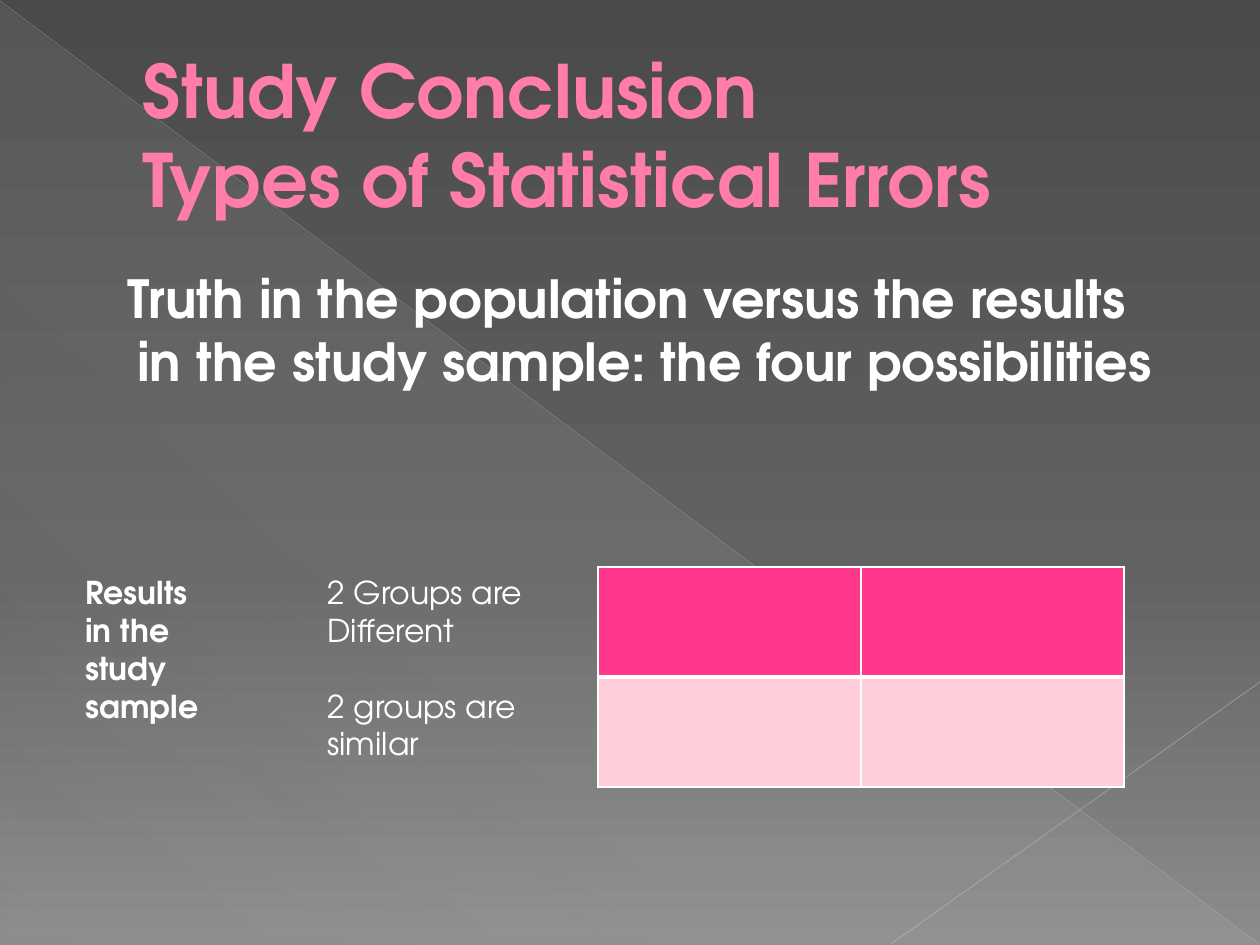
from dataclasses import dataclass

from lxml.etree import SubElement
from pptx import Presentation
from pptx.dml.color import RGBColor
from pptx.enum.shapes import MSO_CONNECTOR, MSO_SHAPE
from pptx.enum.text import MSO_ANCHOR
from pptx.oxml.ns import qn
from pptx.util import Pt

EMU_PER_PX = 914400 / 126
FONT = "TeX Gyre Adventor"
COLORS = {
    "top": "4A4A4A",
    "middle": "626262",
    "bottom": "8C8C8C",
    "sheen": "D2D2D2",
    "diagonal": "BFBFBF",
    "corner": "C6C6C6",
    "title": "FF7DA7",
    "outline": "B12761",
    "white": "FFFFFF",
    "different": "FF388C",
    "similar": "FFCEDA",
}


@dataclass
class Stop:
    position: int
    color: str
    opacity: int = 100


@dataclass
class Line:
    start: tuple[int, int]
    end: tuple[int, int]
    color: str
    width: float
    opacity: int


@dataclass
class Paragraph:
    text: str
    space_before: float = 0


@dataclass
class TextBlock:
    box: tuple[int, int, int, int]
    paragraphs: list[Paragraph]
    size: int
    color: str = "white"
    bold: bool = True
    margin: int = 0
    indent: int = 0
    right_inset: int = 13
    anchor: MSO_ANCHOR = MSO_ANCHOR.TOP
    outline: str = ""


BACKGROUND = [Stop(0, "top"), Stop(60, "middle"), Stop(100, "bottom")]
SHEEN = [Stop(0, "sheen", 10), Stop(70, "sheen", 8), Stop(100, "sheen", 1)]
LINES = [
    Line((0, 1), (1259, 944), "diagonal", 0.39, 35),
    Line((1260, 682), (891, 944), "corner", 0.47, 45),
]
TEXT_BLOCKS = [
    TextBlock((63, 37, 1134, 193), [Paragraph("Study Conclusion\nTypes of Statistical Errors")],
              42, "title", margin=67, anchor=MSO_ANCHOR.MIDDLE, outline="outline"),
    TextBlock((63, 260, 1134, 630),
              [Paragraph("Truth in the population versus the results in the study sample: "
                         "the four possibilities", 6)],
              30, margin=62, indent=-10, right_inset=25),
    TextBlock((73, 567, 158, 165),
              [Paragraph(text) for text in ("Results", "in the", "study", "sample")], 18),
    TextBlock((315, 567, 231, 204),
              [Paragraph("2 Groups are"), Paragraph("Different"),
               Paragraph("2 groups are", 21.6), Paragraph("similar")], 18, bold=False),
]


def px(value: int) -> int:
    return round(value * EMU_PER_PX)


def add_color(parent, color: str, opacity: int = 100) -> None:
    element = SubElement(parent, qn("a:srgbClr"), val=COLORS[color])
    if opacity < 100:
        SubElement(element, qn("a:alpha"), val=str(opacity * 1000))


def set_gradient(fill, owner, stops: list[Stop], angle: int) -> None:
    fill.gradient()
    gradient = next(owner.iter(qn("a:gradFill")))
    stop_list = gradient.find(qn("a:gsLst"))
    for old_stop in list(stop_list):
        stop_list.remove(old_stop)
    for stop in stops:
        element = SubElement(stop_list, qn("a:gs"), pos=str(stop.position * 1000))
        add_color(element, stop.color, stop.opacity)
    direction = gradient.find(qn("a:lin"))
    direction.set("ang", str(angle * 60000))
    direction.set("scaled", "0")


def add_sheen(slide) -> None:
    shape = slide.shapes.add_shape(MSO_SHAPE.RIGHT_TRIANGLE, px(1), px(3), px(1258), px(942))
    shape.shadow.inherit = False
    shape.line.fill.background()
    set_gradient(shape.fill, shape.element.spPr, SHEEN, 133)


def add_line(slide, line: Line) -> None:
    connector = slide.shapes.add_connector(
        MSO_CONNECTOR.STRAIGHT, *(px(value) for value in line.start + line.end))
    connector.line.width = Pt(line.width)
    connector.line.color.rgb = RGBColor.from_string(COLORS[line.color])
    properties = connector.element.spPr
    color = next(properties.iter(qn("a:srgbClr")))
    SubElement(color, qn("a:alpha"), val=str(line.opacity * 1000))
    SubElement(properties, qn("a:effectLst"))


def add_run(paragraph, text: str, block: TextBlock) -> None:
    run = paragraph.add_run()
    run.text = text
    run.font.name = FONT
    run.font.size = Pt(block.size)
    run.font.bold = block.bold
    run.font.color.rgb = RGBColor.from_string(COLORS[block.color])
    if block.outline:
        properties = run.font._element
        outline = properties.makeelement(qn("a:ln"), {"w": str(Pt(0.5))})
        properties.insert(0, outline)
        add_color(SubElement(outline, qn("a:solidFill")), block.outline)


def add_text(slide, block: TextBlock) -> None:
    shape = slide.shapes.add_textbox(*(px(value) for value in block.box))
    frame = shape.text_frame
    frame.word_wrap = True
    frame.vertical_anchor = block.anchor
    frame.margin_right = px(block.right_inset)
    for index, item in enumerate(block.paragraphs):
        paragraph = frame.add_paragraph() if index else frame.paragraphs[0]
        paragraph.space_before = Pt(item.space_before)
        properties = paragraph._p.get_or_add_pPr()
        properties.set("marL", str(px(block.margin)))
        properties.set("indent", str(px(block.indent)))
        for number, text in enumerate(item.text.split("\n")):
            if number:
                paragraph.add_line_break()
            add_run(paragraph, text, block)


def set_cell(cell, color: str, borders: dict[str, int]) -> None:
    properties = cell._tc.get_or_add_tcPr()
    for side, width in borders.items():
        border = SubElement(properties, qn(f"a:ln{side}"), w=str(Pt(width)))
        add_color(SubElement(border, qn("a:solidFill")), "white")
    cell.fill.solid()
    cell.fill.fore_color.rgb = RGBColor.from_string(COLORS[color])


def add_outcome_table(slide) -> None:
    table = slide.shapes.add_table(2, 2, px(598), px(567), px(526), px(220)).table
    table.first_row = False
    table.horz_banding = False
    for row, color in enumerate(("different", "similar")):
        borders = {"L": 1, "R": 1, "T": 3 if row else 1, "B": 1 if row else 3}
        for column in range(2):
            set_cell(table.cell(row, column), color, borders)


def main() -> None:
    presentation = Presentation()
    presentation.slide_width = px(1260)
    presentation.slide_height = px(945)
    slide = presentation.slides.add_slide(presentation.slide_layouts[6])
    set_gradient(slide.background.fill, slide.element, BACKGROUND, 90)
    add_sheen(slide)
    for line in LINES:
        add_line(slide, line)
    for block in TEXT_BLOCKS:
        add_text(slide, block)
    add_outcome_table(slide)
    presentation.save("out.pptx")


if __name__ == "__main__":
    main()
